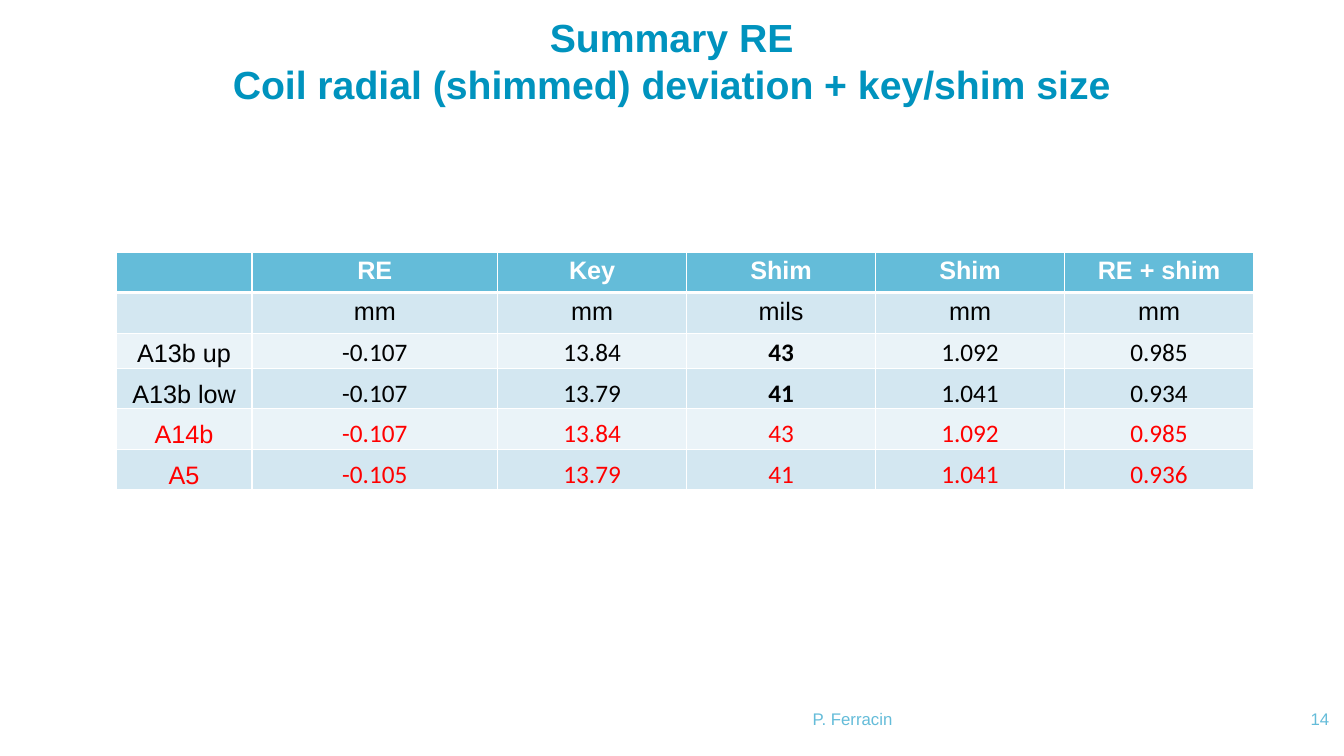
from lxml import etree
from pptx import Presentation
from pptx.dml.color import RGBColor
from pptx.enum import text
from pptx.oxml import ns
from pptx.util import Pt

PX = 6350  # EMU per px, 144 px to the inch
BLUE = RGBColor(0x00, 0x93, 0xBE)
SKY = RGBColor(0x64, 0xBC, 0xD9)
BAND_DARK = RGBColor(0xD3, 0xE7, 0xF1)
BAND_LIGHT = RGBColor(0xEA, 0xF3, 0xF8)
WHITE = RGBColor(0xFF, 0xFF, 0xFF)
BLACK = RGBColor(0x00, 0x00, 0x00)
RED = RGBColor(0xFF, 0x00, 0x00)

CENTER, RIGHT = text.PP_ALIGN.CENTER, text.PP_ALIGN.RIGHT
TOP, MIDDLE, BOTTOM = (text.MSO_ANCHOR.TOP, text.MSO_ANCHOR.MIDDLE,
                       text.MSO_ANCHOR.BOTTOM)

HEADER = ["", "RE", "Key", "Shim", "Shim", "RE + shim"]
UNITS = ["", "mm", "mm", "mils", "mm", "mm"]
COILS = [
    ["A13b up", "-0.107", "13.84", "43", "1.092", "0.985"],
    ["A13b low", "-0.107", "13.79", "41", "1.041", "0.934"],
    ["A14b", "-0.107", "13.84", "43", "1.092", "0.985"],
    ["A5", "-0.105", "13.79", "41", "1.041", "0.936"],
]
SHIM_MILS = 3  # column of the shim size in mils
COLUMN_WIDTHS = [194, 351] + [270] * 4
ROW_HEIGHTS = [58, 58, 50, 58, 58, 58]


class SummarySlide:
    def __init__(self, deck):
        self.page = deck.slides.add_slide(deck.slide_layouts[5])

    def style(self, para, words, size, color, bold=False, font="Arial",
              align=CENTER):
        para.text = words
        para.alignment = align
        para.font.name = font
        para.font.size = Pt(size)
        para.font.bold = bold
        para.font.color.rgb = color

    def frame(self, box, anchor):
        frame = box.text_frame
        frame.word_wrap = True
        frame.auto_size = text.MSO_AUTO_SIZE.NONE
        frame.vertical_anchor = anchor
        frame.margin_left = frame.margin_right = 0
        frame.margin_top = frame.margin_bottom = 0
        return frame.paragraphs[0]

    def title(self, words, left, top, width, height):
        box = self.page.shapes.title
        box.left, box.top = left * PX, top * PX
        box.width, box.height = width * PX, height * PX
        self.style(self.frame(box, MIDDLE), words, 28, BLUE, bold=True)

    def footer(self, words, left, width, align):
        box = self.page.shapes.add_textbox(left * PX, 986 * PX,
                                           width * PX, 56 * PX)
        self.style(self.frame(box, BOTTOM), words, 12, SKY, align=align)

    def borders(self, cell, bottom_width):
        properties = cell._tc.get_or_add_tcPr()
        widths = {"lnL": 1, "lnR": 1, "lnT": 1, "lnB": bottom_width}
        for index, (side, width) in enumerate(widths.items()):
            line = etree.Element(ns.qn(f"a:{side}"), w=str(Pt(width)))
            fill = etree.SubElement(line, ns.qn("a:solidFill"))
            etree.SubElement(fill, ns.qn("a:srgbClr"), val=str(WHITE))
            properties.insert(index, line)

    def cell(self, cell, words, fill, color, bold, font, is_coil, bottom_width):
        cell.fill.solid()
        cell.fill.fore_color.rgb = fill
        cell.vertical_anchor = BOTTOM if is_coil else TOP
        if is_coil:
            cell.margin_left = cell.margin_right = cell.margin_top = PX
            cell.margin_bottom = 0
        self.style(cell.text_frame.paragraphs[0], words, 18, color, bold, font)
        self.borders(cell, bottom_width)

    def table(self, rows, left, top):
        grid = self.page.shapes.add_table(
            len(rows), len(COLUMN_WIDTHS), left * PX, top * PX,
            sum(COLUMN_WIDTHS) * PX, sum(ROW_HEIGHTS) * PX).table
        for column, width in zip(grid.columns, COLUMN_WIDTHS):
            column.width = width * PX
        for r, row in enumerate(rows):
            grid.rows[r].height = ROW_HEIGHTS[r] * PX
            is_header, is_coil, is_red = r == 0, r >= 2, r >= 4
            band = BAND_DARK if r % 2 else BAND_LIGHT
            color = WHITE if is_header else RED if is_red else BLACK
            for c, words in enumerate(row):
                bold = is_header or (c == SHIM_MILS and r in (2, 3))
                font = "Calibri" if is_coil and c else "Arial"
                self.cell(grid.cell(r, c), words, SKY if is_header else band,
                          color, bold, font, is_coil, 3 if is_header else 1)


def main():
    deck = Presentation()
    deck.slide_width, deck.slide_height = 1920 * PX, 1080 * PX
    slide = SummarySlide(deck)

    # Title
    slide.title("Summary RE\vCoil radial (shimmed) deviation + key/shim size",
                128, 29, 1663, 114)

    # Footer and page number
    slide.footer("P. Ferracin", 645, 1146, CENTER)
    slide.footer("14", 1824, 75, RIGHT)

    # Coil deviations and shim sizes
    slide.table([HEADER, UNITS] + COILS, 166, 360)

    deck.save("out.pptx")


if __name__ == "__main__":
    main()
